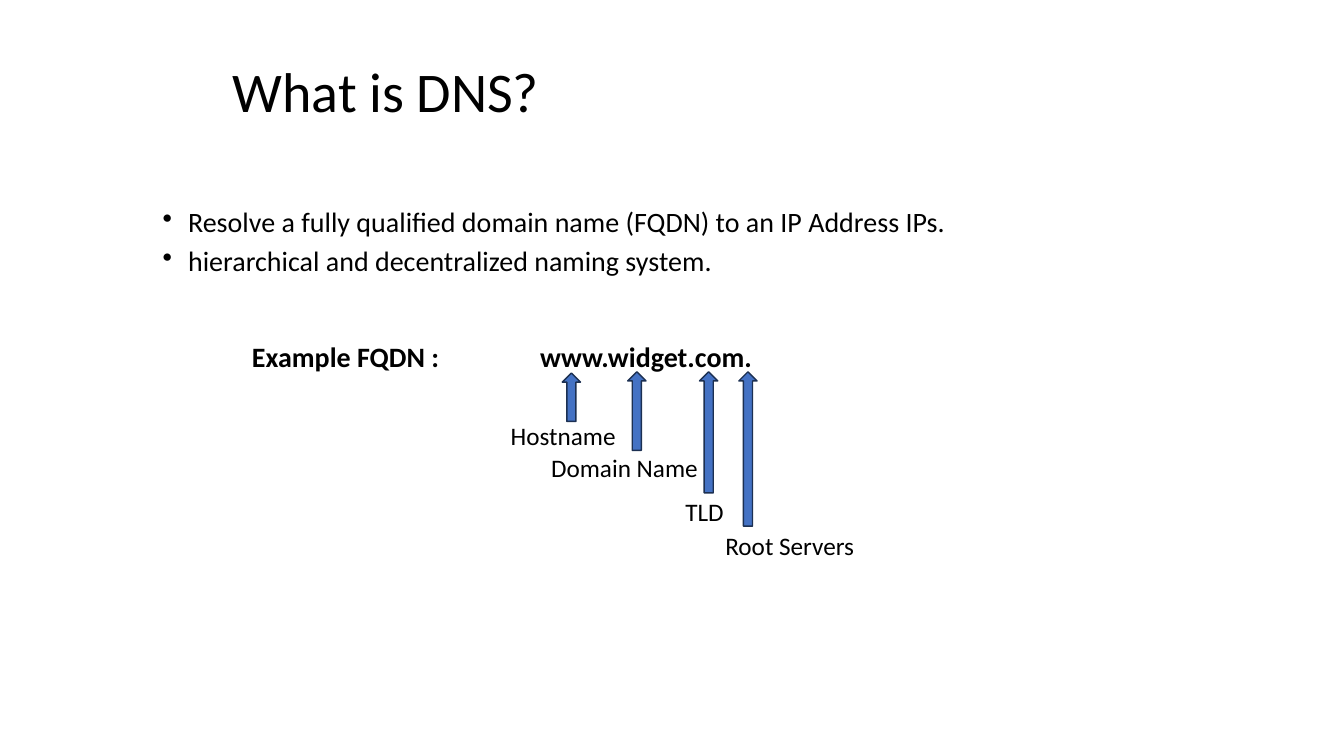
from pptx import Presentation
from pptx.dml.color import RGBColor
from pptx.enum.shapes import MSO_SHAPE
from pptx.enum.text import MSO_ANCHOR, MSO_AUTO_SIZE, PP_ALIGN
from pptx.oxml.ns import qn
from pptx.util import Cm, Pt

UP_ARROW = MSO_SHAPE.UP_ARROW
TOP = MSO_ANCHOR.TOP
NO_FIT = MSO_AUTO_SIZE.NONE
LEFT = PP_ALIGN.LEFT
TITLE_ONLY = 5

FONT = "Calibri"
BLACK, BLUE, NAVY = "000000", "4472C4", "1C3052"

BULLETS = [
    "Resolve a fully qualified domain name (FQDN) to an IP Address IPs.",
    "hierarchical and decentralized naming system.",
]
# Name part, arrow (x, y, height), label (x, y, width), in cm from the example's corner
NAME_PARTS = [
    ("Hostname", (9.14, 0.87, 1.22), (7.59, 1.93, 3.18)),
    ("Domain Name", (10.79, 0.84, 1.98), (8.61, 2.75, 4.24)),
    ("TLD", (12.6, 0.84, 3.05), (11.99, 3.84, 1.65)),
    ("Root Servers", (13.59, 0.84, 3.89), (13, 4.7, 3.94)),
]


def color(value):
    return RGBColor.from_string(value)


def style(p, size, bold=False, spacing=None):
    p.alignment = LEFT
    p.line_spacing = spacing
    p.font.name = FONT
    p.font.size = Pt(size)
    p.font.bold = bold
    p.font.color.rgb = color(BLACK)


def add_text(s, left, top, width, height, lines, size, bold=False, spacing=None):
    tf = s.shapes.add_textbox(Cm(left), Cm(top), Cm(width), Cm(height)).text_frame
    tf.word_wrap = True
    tf.text = "\n".join(lines)
    for p in tf.paragraphs:
        style(p, size, bold, spacing)
    return tf


def add_title(s, left, top, width, height):
    title = s.shapes.title
    title.left, title.top = Cm(left), Cm(top)
    title.width, title.height = Cm(width), Cm(height)
    tf = title.text_frame
    tf.text = "What is DNS?"
    tf.vertical_anchor = TOP
    tf.auto_size = NO_FIT
    style(tf.paragraphs[0], 40, spacing=0.9)


def add_bullets(s, left, top, width, height):
    tf = add_text(s, left, top, width, height, BULLETS, 20, spacing=0.9)
    for p in tf.paragraphs:
        pPr = p._p.get_or_add_pPr()
        pPr.set("marL", str(Cm(1.7)))
        pPr.set("indent", str(Cm(-0.64)))
        bullet = pPr.makeelement(qn("a:buChar"), {"char": "•"})
        pPr.insert_element_before(bullet, "a:tabLst", "a:defRPr", "a:extLst")
    tf.paragraphs[1].space_before = Pt(6)


def add_arrow(s, left, top, height):
    arrow = s.shapes.add_shape(UP_ARROW, Cm(left), Cm(top), Cm(0.46), Cm(height))
    arrow.shadow.inherit = False
    arrow.fill.solid()
    arrow.fill.fore_color.rgb = color(BLUE)
    arrow.line.color.rgb = color(NAVY)
    arrow.line.width = Pt(1)


def add_example(s, left, top):
    # Heading and the name being explained
    add_text(s, left + 1.07, top, 6, 1, ["Example FQDN :"], 20, True, 0.9)
    add_text(s, left + 8.33, top, 7, 1, ["www.widget.com."], 20, True, 0.9)
    # An arrow and a label for each part of the name
    for name, (ax, ay, length), (lx, ly, width) in NAME_PARTS:
        add_arrow(s, left + ax, top + ay, length)
        add_text(s, left + lx, top + ly, width, 1.02, [name], 18)


def main():
    prs = Presentation()
    prs.slide_width, prs.slide_height = Cm(33.87), Cm(19.05)
    s = prs.slides.add_slide(prs.slide_layouts[TITLE_ONLY])
    add_title(s, 5.61, 1.5, 24.97, 3.1)
    add_bullets(s, 2.79, 5.13, 27.76, 11.81)
    add_example(s, 5.03, 8.53)
    prs.save("out.pptx")


if __name__ == "__main__":
    main()
